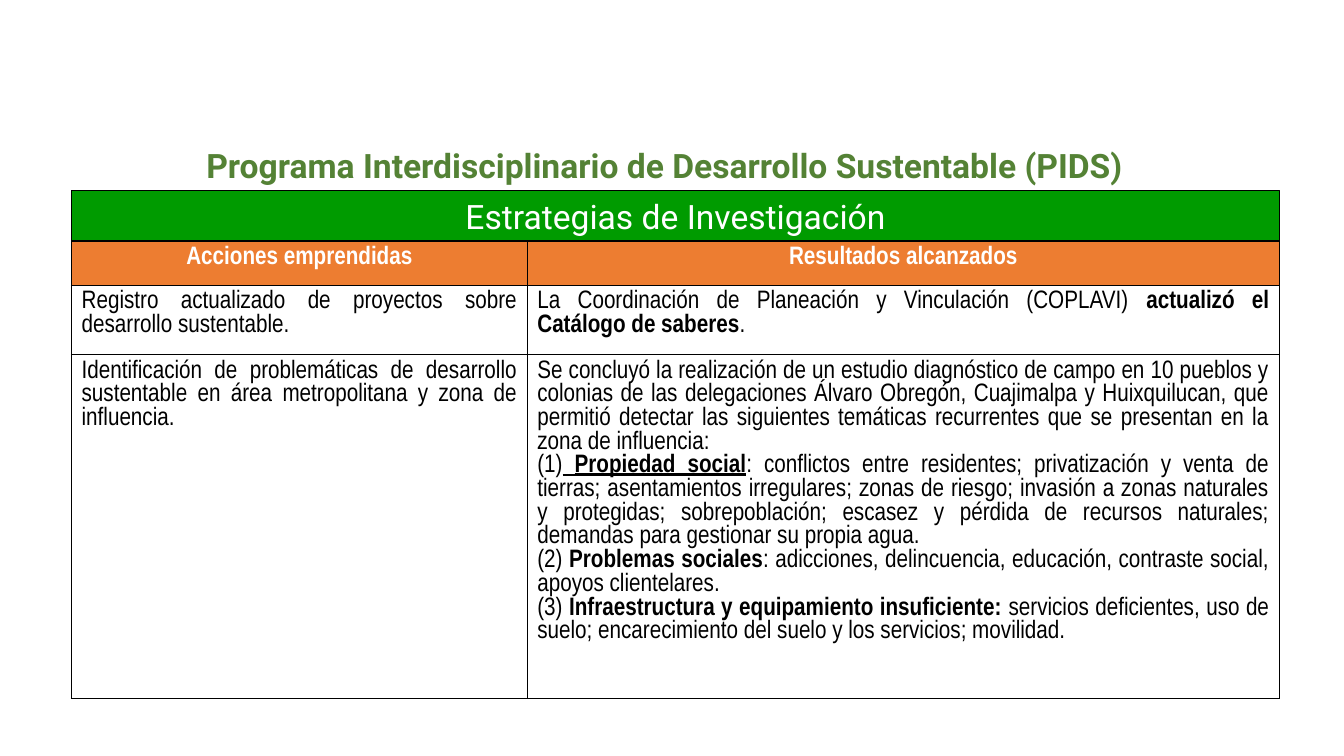
"""Build the slide on research strategies of the PIDS programme."""
from dataclasses import dataclass

from lxml.etree import SubElement
from pptx import Presentation
from pptx.dml.color import RGBColor
from pptx.enum.shapes import MSO_SHAPE
from pptx.enum.text import MSO_ANCHOR, PP_ALIGN as Align
from pptx.oxml.ns import qn
from pptx.util import Inches, Pt

BLACK, WHITE = "000000", "FFFFFF"
LEFT, WIDTH = 0.71, 11.98
BANNER_TOP, BANNER_HEIGHT = 1.89, 0.5
COLUMN_WIDTHS = (4.52, 7.46)
ROW_HEIGHTS = (0.44, 0.69, 3.41)


@dataclass
class Span:
    """A stretch of text with its emphasis."""
    text: str
    bold: bool = False
    underline: bool = False


HEADERS = ("Acciones emprendidas", "Resultados alcanzados")
ROWS = (
    (
        [[Span("Registro actualizado de proyectos sobre desarrollo sustentable.")]],
        [[Span("La Coordinación de Planeación y Vinculación (COPLAVI) "),
          Span("actualizó el Catálogo de saberes", bold=True), Span(".")]],
    ),
    (
        [[Span("Identificación de problemáticas de desarrollo sustentable en área "
               "metropolitana y zona de influencia.")]],
        [
            [Span("Se concluyó la realización de un estudio diagnóstico de campo en 10 "
                  "pueblos y colonias de las delegaciones Álvaro Obregón, Cuajimalpa y "
                  "Huixquilucan, que permitió detectar las siguientes temáticas "
                  "recurrentes que se presentan en la zona de influencia:")],
            [Span("(1)"), Span(" ", underline=True),
             Span("Propiedad social", bold=True, underline=True),
             Span(": conflictos entre residentes; privatización y venta de tierras; "
                  "asentamientos irregulares; zonas de riesgo; invasión a zonas naturales "
                  "y protegidas; sobrepoblación; escasez y pérdida de recursos naturales; "
                  "demandas para gestionar su propia agua.")],
            [Span("(2) "), Span("Problemas sociales", bold=True),
             Span(": adicciones, delincuencia, educación, contraste social, apoyos "
                  "clientelares.")],
            [Span("(3) "), Span("Infraestructura y equipamiento insuficiente: ", bold=True),
             Span("servicios deficientes, uso de suelo; encarecimiento del suelo y los "
                  "servicios; movilidad.")],
        ],
    ),
)


def rgb(code: str) -> RGBColor:
    """Turn a hex string into a colour."""
    return RGBColor.from_string(code)


def style(para, align, name: str, size: float, color: str) -> None:
    """Set the alignment and font of a paragraph."""
    para.alignment = align
    para.font.name = name
    para.font.size = Pt(size)
    para.font.color.rgb = rgb(color)


def write_cell(cell, paragraphs: list, align, color: str) -> None:
    """Fill a cell with paragraphs made of spans."""
    frame = cell.text_frame
    for index, spans in enumerate(paragraphs):
        para = frame.add_paragraph() if index else frame.paragraphs[0]
        style(para, align, "Arial Narrow", 18, color)
        for span in spans:
            run = para.add_run()
            run.text = span.text
            if span.bold:
                run.font.bold = True
            if span.underline:
                run.font.underline = True


def add_borders(cell) -> None:
    """Draw a thin black line on each side of a cell."""
    properties = cell._tc.get_or_add_tcPr()
    for side in ("lnL", "lnR", "lnT", "lnB"):
        line = SubElement(properties, qn(f"a:{side}"), w=str(Pt(1)))
        fill = SubElement(line, qn("a:solidFill"))
        SubElement(fill, qn("a:srgbClr"), val=BLACK)


def add_results(page) -> None:
    """Add the table of actions and results."""
    table = page.shapes.add_table(
        len(ROW_HEIGHTS), len(COLUMN_WIDTHS),
        Inches(LEFT), Inches(BANNER_TOP + BANNER_HEIGHT),
        Inches(WIDTH), Inches(sum(ROW_HEIGHTS))).table
    table.first_row = table.horz_banding = False
    for column, width in zip(table.columns, COLUMN_WIDTHS):
        column.width = Inches(width)
    for row, height in zip(table.rows, ROW_HEIGHTS):
        row.height = Inches(height)
    for cell in table.iter_cells():
        add_borders(cell)
        cell.fill.background()
    for cell, header in zip(table.rows[0].cells, HEADERS):
        cell.fill.solid()
        cell.fill.fore_color.rgb = rgb("ED7D31")
        write_cell(cell, [[Span(header, bold=True)]], Align.CENTER, WHITE)
    for index, contents in enumerate(ROWS, 1):
        for cell, paragraphs in zip(table.rows[index].cells, contents):
            write_cell(cell, paragraphs, Align.JUSTIFY, BLACK)


def add_banner(page) -> None:
    """Add the green band above the table."""
    banner = page.shapes.add_shape(
        MSO_SHAPE.RECTANGLE, Inches(LEFT), Inches(BANNER_TOP),
        Inches(WIDTH), Inches(BANNER_HEIGHT))
    banner.shadow.inherit = False
    banner.fill.solid()
    banner.fill.fore_color.rgb = rgb("009B00")
    banner.line.color.rgb = rgb(BLACK)
    banner.line.width = Pt(0.75)
    banner.text_frame.text = "Estrategias de Investigación"
    style(banner.text_frame.paragraphs[0], Align.CENTER, "Roboto", 24, WHITE)


def set_title(page) -> None:
    """Place and format the slide title."""
    title = page.shapes.title
    title.left, title.top = Inches(1.04), Inches(1.39)
    title.width, title.height = Inches(11.1), Inches(0.5)
    frame = title.text_frame
    frame.text = "Programa Interdisciplinario de Desarrollo Sustentable (PIDS)"
    frame.vertical_anchor = MSO_ANCHOR.MIDDLE
    para = frame.paragraphs[0]
    style(para, Align.CENTER, "Roboto", 24, "548235")
    para.font.bold = True


def main() -> None:
    """Build and save the deck."""
    deck = Presentation()
    deck.slide_width, deck.slide_height = Inches(13.33), Inches(7.5)
    page = deck.slides.add_slide(deck.slide_layouts[5])
    set_title(page)
    add_results(page)
    add_banner(page)
    deck.save("out.pptx")


if __name__ == "__main__":
    main()
